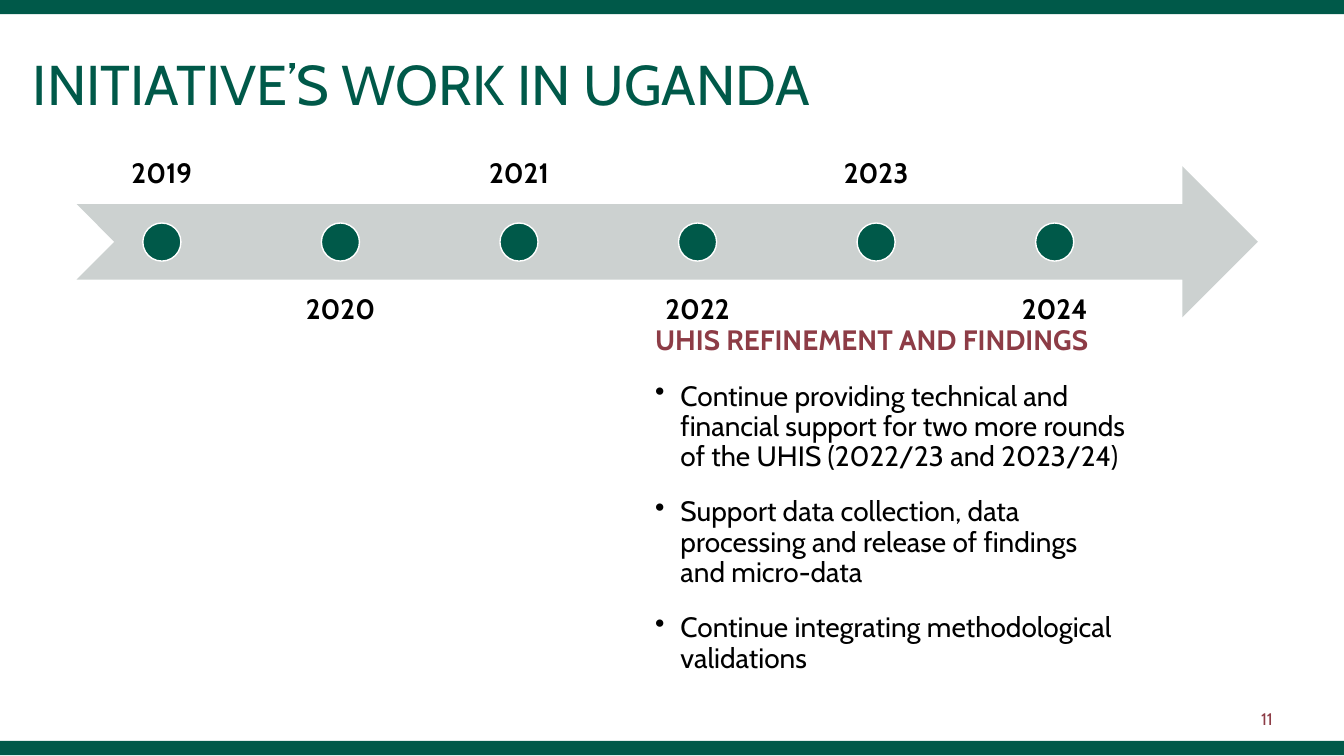
"""Build the slide with the timeline of the initiative's work in Uganda."""
from lxml.etree import SubElement
from pptx import Presentation
from pptx.dml.color import RGBColor
from pptx.enum.shapes import MSO_SHAPE as Preset
from pptx.enum.text import MSO_ANCHOR as Anchor, PP_ALIGN as Align
from pptx.oxml.ns import qn
from pptx.util import Cm, Pt

GREEN = RGBColor(0x00, 0x59, 0x49)
GREY = RGBColor(0xCC, 0xD1, 0xD0)
RED = RGBColor(0x8D, 0x3C, 0x46)
BLACK = RGBColor(0x00, 0x00, 0x00)
WHITE = RGBColor(0xFF, 0xFF, 0xFF)

presentation = Presentation()
presentation.slide_width = Cm(33.87)
presentation.slide_height = Cm(19.05)
slide = presentation.slides.add_slide(presentation.slide_layouts[6])


def add_filled_shape(preset, left, top, width, height, color):
    shape = slide.shapes.add_shape(preset, Cm(left), Cm(top), Cm(width), Cm(height))
    shape.shadow.inherit = False
    shape.fill.solid()
    shape.fill.fore_color.rgb = color
    shape.line.fill.background()
    return shape


def add_text(left, top, width, height, lines, size, color, bold=False,
             align=Align.LEFT, anchor=Anchor.TOP):
    frame = slide.shapes.add_textbox(Cm(left), Cm(top), Cm(width), Cm(height)).text_frame
    frame.word_wrap = True
    frame.vertical_anchor = anchor
    frame.text = "\n".join(lines)
    for paragraph in frame.paragraphs:
        paragraph.alignment = align
        paragraph.line_spacing = 0.9
        paragraph.font.name = "Cabin"
        paragraph.font.size = Pt(size)
        paragraph.font.bold = bold
        paragraph.font.color.rgb = color
    return frame


for bar_top in (18.67, 0):
    add_filled_shape(Preset.RECTANGLE, 0, bar_top, 33.87, 0.36, GREEN)

add_text(24.71, 17.63, 7.62, 1.02, ["11"], 12, RED, align=Align.RIGHT, anchor=Anchor.MIDDLE)

add_filled_shape(Preset.NOTCHED_RIGHT_ARROW, 1.93, 4.19, 29.77, 3.81, GREY)
for index, year in enumerate(range(2019, 2025)):
    center = 4.08 + 4.5 * index
    label_top, anchor = (7.06, Anchor.TOP) if index % 2 else (1.35, Anchor.BOTTOM)
    label = add_text(center - 2.15, label_top, 4.3, 3.81, [str(year)], 20, BLACK,
                     bold=True, align=Align.CENTER, anchor=anchor)
    label.margin_left = label.margin_right = Cm(0.4)
    label.margin_top = label.margin_bottom = Cm(0.4)
    dot = add_filled_shape(Preset.OVAL, center - 0.48, 5.62, 0.96, 0.96, GREEN)
    dot.line.color.rgb = WHITE
    dot.line.width = Pt(1)

findings = add_text(16.26, 8.1, 12.37, 10.03, [
    "UHIS REFINEMENT AND FINDINGS",
    "Continue providing technical and financial support for two more rounds "
    "of the UHIS (2022/23 and 2023/24)",
    "Support data collection, data processing and release of findings and micro-data",
    "Continue integrating methodological validations",
], 20, BLACK)
heading, *bullets = findings.paragraphs
heading.font.bold = True
heading.font.color.rgb = RED
heading.space_after = Pt(18)
for bullet in bullets:
    bullet.space_after = Pt(18)
    properties = bullet.font._element.getparent()
    properties.set("marL", str(Cm(0.64)))
    properties.set("indent", str(-Cm(0.64)))
    mark = SubElement(properties, qn("a:buChar"), char="•")
    properties.find(qn("a:defRPr")).addprevious(mark)

add_text(0.58, 1.32, 23.67, 1.98, ["INITIATIVE’S WORK IN UGANDA"], 40, GREEN)

presentation.save("out.pptx")
